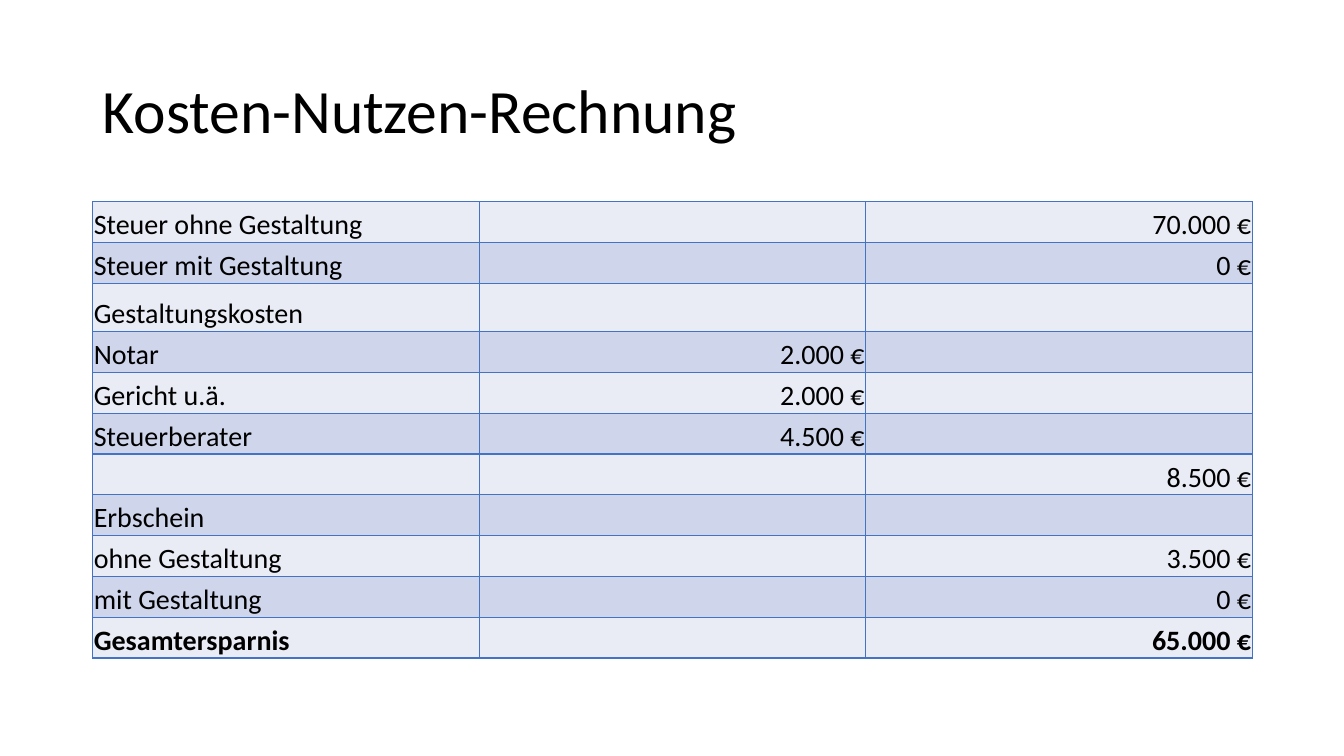
"""Build a slide with a cost-benefit table for tax planning."""
from lxml import etree
from pptx import Presentation
from pptx.dml.color import RGBColor
from pptx.enum.text import MSO_ANCHOR, PP_ALIGN
from pptx.oxml.ns import qn
from pptx.util import Inches, Pt

MIDDLE, BOTTOM = MSO_ANCHOR.MIDDLE, MSO_ANCHOR.BOTTOM
LEFT, RIGHT = PP_ALIGN.LEFT, PP_ALIGN.RIGHT
BLACK, BORDER = "000000", "4472C4"
BANDS = ["E9EBF5", "CFD5EA"]
COLUMN_WIDTH, ROW_HEIGHT, HEADING_HEIGHT = 11.5 / 3, 0.405, 0.48
HEADING, TOTAL = "Gestaltungskosten", "Gesamtersparnis"

ROWS = [
    ("Steuer ohne Gestaltung", "", "70.000 €"),
    ("Steuer mit Gestaltung", "", "0 €"),
    (HEADING, "", ""),
    ("Notar", "2.000 €", ""),
    ("Gericht u.ä.", "2.000 €", ""),
    ("Steuerberater", "4.500 €", ""),
    ("", "", "8.500 €"),
    ("Erbschein", "", ""),
    ("ohne Gestaltung", "", "3.500 €"),
    ("mit Gestaltung", "", "0 €"),
    (TOTAL, "", "65.000 €"),
]


def color(value):
    return RGBColor.from_string(value)


def add_text(paragraph, text, size, bold=False):
    run = paragraph.add_run()
    run.text = text
    run.font.name = "Calibri"
    run.font.size = Pt(size)
    run.font.bold = bold
    run.font.color.rgb = color(BLACK)


presentation = Presentation()
presentation.slide_width = Inches(13.33)
presentation.slide_height = Inches(7.5)
slide = presentation.slides.add_slide(presentation.slide_layouts[6])

title = slide.shapes.add_textbox(Inches(0.92), Inches(0.4), Inches(11.5), Inches(1.45))
title.text_frame.word_wrap = True
title.text_frame.vertical_anchor = MIDDLE
title.text_frame.paragraphs[0].line_spacing = 0.9
add_text(title.text_frame.paragraphs[0], "Kosten-Nutzen-Rechnung", 44)

table = slide.shapes.add_table(
    len(ROWS), 3, Inches(0.92), Inches(2), Inches(11.5), Inches(4.53)
).table
table.first_row = False
for column in table.columns:
    column.width = Inches(COLUMN_WIDTH)

for row_index, values in enumerate(ROWS):
    height = HEADING_HEIGHT if values[0] == HEADING else ROW_HEIGHT
    table.rows[row_index].height = Inches(height)
    for column_index, text in enumerate(values):
        cell = table.cell(row_index, column_index)
        cell.margin_left = cell.margin_right = cell.margin_top = Inches(0.01)
        cell.margin_bottom = 0
        cell.vertical_anchor = BOTTOM
        properties = cell._tc.get_or_add_tcPr()
        for side in ("a:lnL", "a:lnR", "a:lnT", "a:lnB"):
            line = etree.SubElement(properties, qn(side), w=str(Pt(1)))
            line_fill = etree.SubElement(line, qn("a:solidFill"))
            etree.SubElement(line_fill, qn("a:srgbClr"), val=BORDER)
        cell.fill.solid()
        cell.fill.fore_color.rgb = color(BANDS[row_index % 2])
        if text:
            paragraph = cell.text_frame.paragraphs[0]
            paragraph.alignment = RIGHT if column_index else LEFT
            add_text(paragraph, text, 20, bold=values[0] == TOTAL)

presentation.save("out.pptx")
